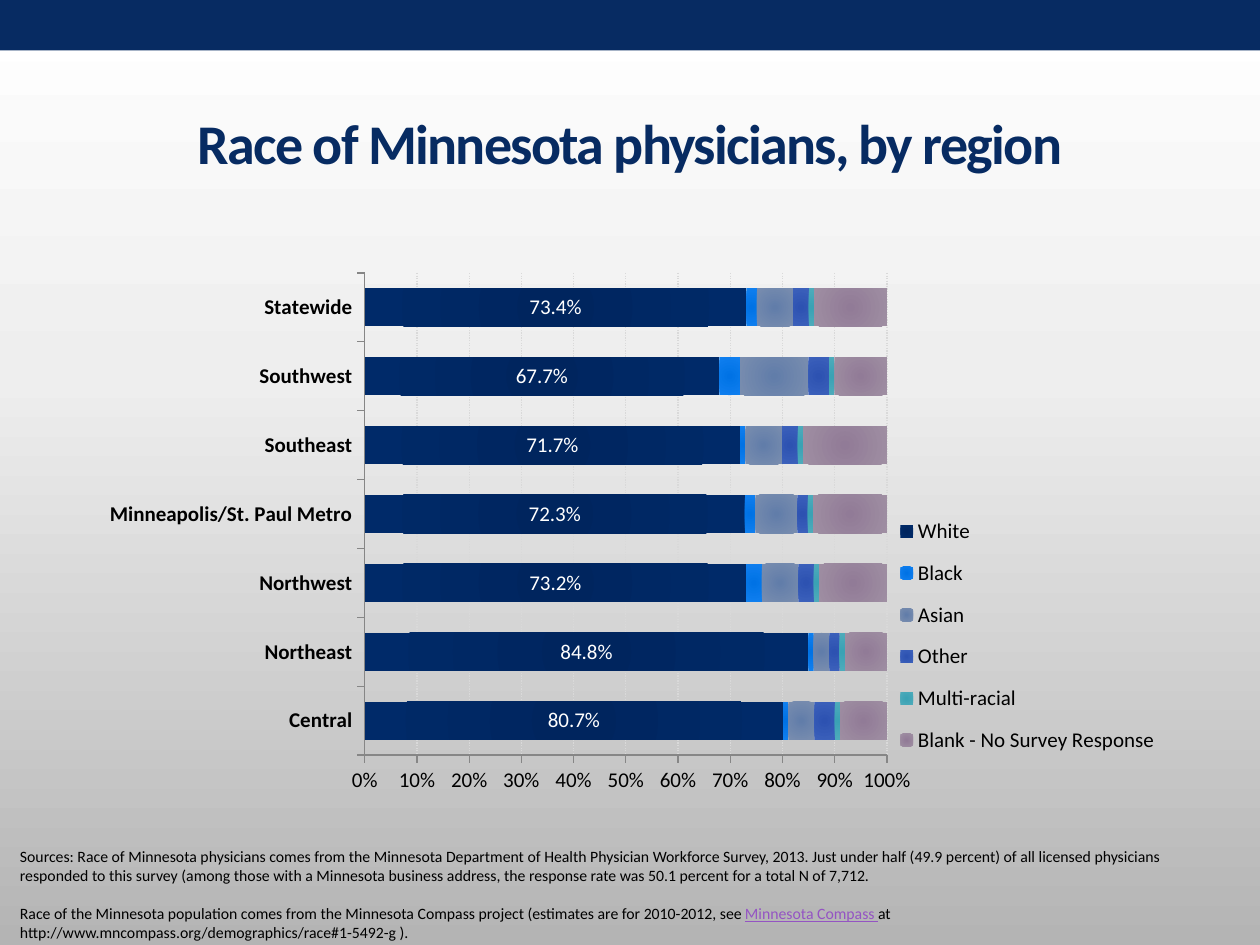
import pptx
import pptx.chart.data
import pptx.dml.color
import pptx.enum.chart
import pptx.enum.dml
import pptx.enum.shapes
import pptx.enum.text
import pptx.oxml
import pptx.oxml.ns
import pptx.util

Inches = pptx.util.Inches
Pt = pptx.util.Pt
qn = pptx.oxml.ns.qn

COLORS = {
    "navy": "072B62", "white": "FFFFFF", "black": "000000", "link": "9454C3",
    "grid": "D9D9D9", "axis": "868686", "mist": "EEEEEE", "smoke": "B4B4B4",
    "blue": "297FD5", "slate": "7F8FA9", "royal": "4A66AC",
    "teal": "5AA2AE", "mauve": "9D90A0",
}
REGIONS = ["Central", "Northeast", "Northwest", "Minneapolis/St. Paul Metro",
           "Southeast", "Southwest", "Statewide"]
RACES = [
    ("White", "navy", [0.807, 0.848, 0.732, 0.723, 0.717, 0.677, 0.734]),
    ("Black", "blue", [0.01, 0.01, 0.03, 0.02, 0.01, 0.04, 0.02]),
    ("Asian", "slate", [0.05, 0.03, 0.07, 0.08, 0.07, 0.13, 0.07]),
    ("Other", "royal", [0.04, 0.02, 0.03, 0.02, 0.03, 0.04, 0.03]),
    ("Multi-racial", "teal", [0.01] * 7),
    ("Blank - No Survey Response", "mauve", [0.09, 0.08, 0.13, 0.14, 0.16, 0.1, 0.14]),
]
SOURCES = [
    [("Sources: Race of Minnesota physicians comes from the Minnesota Department of Health "
      "Physician Workforce Survey, 2013. Just under half (49.9 percent) of all licensed "
      "physicians responded to this survey (among those with a Minnesota business address, "
      "the response rate was 50.1 percent for a total N of 7,712.", {})],
    [("Race of the Minnesota population comes from the Minnesota Compass project "
      "(estimates are for 2010-2012, see ", {}),
     ("Minnesota Compass ", {"color": "link", "underline": True}),
     ("at http://www.mncompass.org/demographics/race#1-5492-g ).", {})],
]


def rgb(name):
    return pptx.dml.color.RGBColor.from_string(COLORS[name])


def set_values(target, values):
    for key, value in values.items():
        setattr(target, key, value)


def set_font(font, color="black", **values):
    set_values(font, {"name": "Calibri", **values})
    font.color.rgb = rgb(color)


def gradient(stops, direction):
    """Return a gradient fill from (position, colour name, colour changes)."""
    points = "".join(
        f'<a:gs pos="{position * 1000}"><a:srgbClr val="{COLORS[name]}">{changes}</a:srgbClr></a:gs>'
        for position, name, changes in stops)
    return pptx.oxml.parse_xml(
        f'<a:gradFill {pptx.oxml.ns.nsdecls("a")} rotWithShape="1">'
        f"<a:gsLst>{points}</a:gsLst>{direction}</a:gradFill>")


def swap_solid(parent, fill):
    parent.replace(parent.find(qn("a:solidFill")), fill)


class SlideBuilder:
    def __init__(self, deck):
        self.page = deck.slides.add_slide(deck.slide_layouts[5])

    def background(self):
        self.page.background.fill.solid()
        properties = self.page._element.find(".//" + qn("p:bgPr"))
        stops = [(0, "white", ""), (40, "mist", ""), (100, "smoke", "")]
        swap_solid(properties, gradient(stops, '<a:lin ang="5400000" scaled="0"/>'))

    def band(self, color, *place):
        shape = self.page.shapes.add_shape(
            pptx.enum.shapes.MSO_SHAPE.RECTANGLE, *map(Inches, place))
        shape.shadow.inherit = False
        shape.fill.solid()
        shape.fill.fore_color.rgb = rgb(color)
        shape.line.fill.background()

    def title(self, text, *place):
        box = self.page.shapes.title
        set_values(box, dict(zip(("left", "top", "width", "height"), map(Inches, place))))
        box.text_frame.vertical_anchor = pptx.enum.text.MSO_ANCHOR.MIDDLE
        para = box.text_frame.paragraphs[0]
        para.alignment = pptx.enum.text.PP_ALIGN.CENTER
        span = para.add_run()
        span.text = text
        set_font(span.font, "navy", size=Pt(32), bold=True)
        span.font._element.set("spc", "-100")

    def source_text(self, paragraphs, *place):
        frame = self.page.shapes.add_textbox(*map(Inches, place)).text_frame
        frame.word_wrap = True
        frame.vertical_anchor = pptx.enum.text.MSO_ANCHOR.MIDDLE
        for index, spans in enumerate(paragraphs):
            para = frame.add_paragraph() if index else frame.paragraphs[0]
            if index:
                para.space_before = Pt(11)
            for text, style in spans:
                span = para.add_run()
                span.text = text
                set_font(span.font, size=Pt(9), **style)

    def stacked_bars(self, categories, rows, *place):
        data = pptx.chart.data.CategoryChartData(number_format="###0.0%")
        data.categories = categories
        for name, _, values in rows:
            data.add_series(name, values)
        chart = self.page.shapes.add_chart(
            pptx.enum.chart.XL_CHART_TYPE.BAR_STACKED_100,
            *map(Inches, place), data).chart
        set_font(chart.font, size=Pt(12))
        chart.has_title = False
        plot = chart.plots[0]
        set_values(plot, {"gap_width": 81, "overlap": 100, "vary_by_categories": False})
        center = ('<a:path path="circle"><a:fillToRect l="50000" t="50000" '
                  'r="50000" b="50000"/></a:path>')
        for series, (_, color, _) in zip(plot.series, rows):
            series.format.fill.solid()
            stops = [(0, color, '<a:satMod val="150000"/><a:lumMod val="90000"/>'),
                     (100, color, '<a:satMod val="130000"/>')]
            swap_solid(series._element.get_or_add_spPr(), gradient(stops, center))
        labels = plot.series[0].data_labels
        set_values(labels, {"show_value": True, "number_format": "###0.0%",
                            "number_format_is_linked": False})
        set_font(labels.font, "white", size=Pt(12))
        self.axes(chart)
        chart.has_legend = True
        chart.legend.position = pptx.enum.chart.XL_LEGEND_POSITION.RIGHT
        chart.legend.include_in_layout = False
        set_font(chart.legend.font, size=Pt(12))
        self.layout(plot._element.getparent(), 0.267, 0.02, 0.478, 0.884, True)
        self.layout(chart.legend._element, 0.755, 0.44, 0.24, 0.49)

    def axes(self, chart):
        for axis, bold in ((chart.category_axis, True), (chart.value_axis, False)):
            axis.major_tick_mark = pptx.enum.chart.XL_TICK_MARK.OUTSIDE
            axis.format.line.color.rgb = rgb("axis")
            axis.format.line.width = Pt(0.75)
            set_font(axis.tick_labels.font, size=Pt(12), bold=bold)
        axis = chart.value_axis
        set_values(axis, {"minimum_scale": 0, "maximum_scale": 1, "major_unit": 0.1,
                          "has_major_gridlines": True})
        set_values(axis.tick_labels, {"number_format": "0%", "number_format_is_linked": False})
        line = axis.major_gridlines.format.line
        line.color.rgb = rgb("grid")
        line.width = Pt(0.75)
        line.dash_style = pptx.enum.dml.MSO_LINE.ROUND_DOT

    def layout(self, parent, left, top, width, height, inner=False):
        """Fix a chart part at fractions of the chart's size."""
        for old in parent.findall(qn("c:layout")):
            parent.remove(old)
        target = '<c:layoutTarget val="inner"/>' if inner else ""
        modes = '<c:xMode val="edge"/><c:yMode val="edge"/>'
        sizes = "".join(f'<c:{key} val="{value}"/>'
                        for key, value in zip("xywh", (left, top, width, height)))
        element = pptx.oxml.parse_xml(
            f'<c:layout {pptx.oxml.ns.nsdecls("c")}><c:manualLayout>'
            f"{target}{modes}{sizes}</c:manualLayout></c:layout>")
        position = parent.find(qn("c:legendPos"))
        parent.insert(0 if position is None else parent.index(position) + 1, element)


def main():
    deck = pptx.Presentation()
    deck.slide_width, deck.slide_height = Inches(10), Inches(7.5)
    slide = SlideBuilder(deck)
    slide.background()
    slide.band("white", 0, 0.24, 10, 0.25)
    slide.band("navy", 0, 0, 10, 0.4)
    slide.title("Race of Minnesota physicians, by region", 0.5, 0.81, 9, 0.64)
    slide.stacked_bars(REGIONS, RACES, 0.58, 2.08, 8.67, 4.33)
    slide.source_text(SOURCES, 0.06, 6.67, 9.28, 0.86)
    deck.save("out.pptx")


if __name__ == "__main__":
    main()
